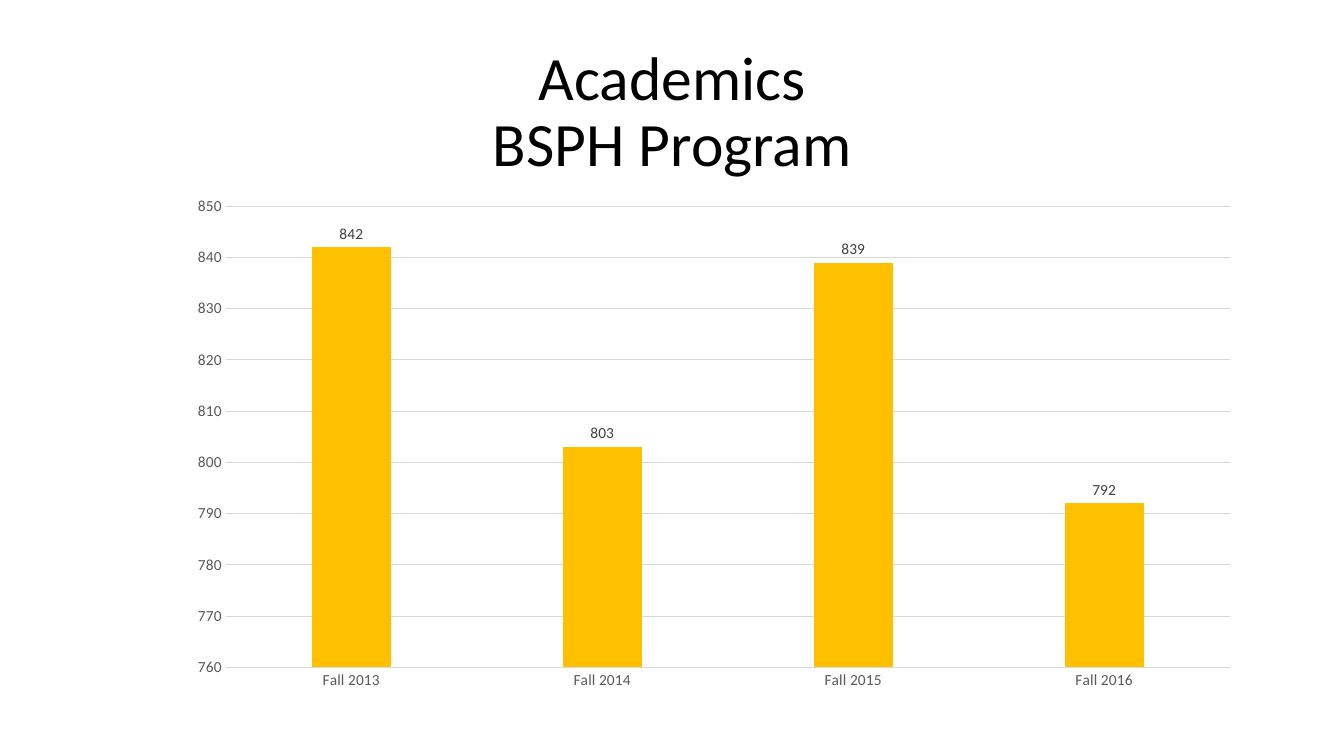
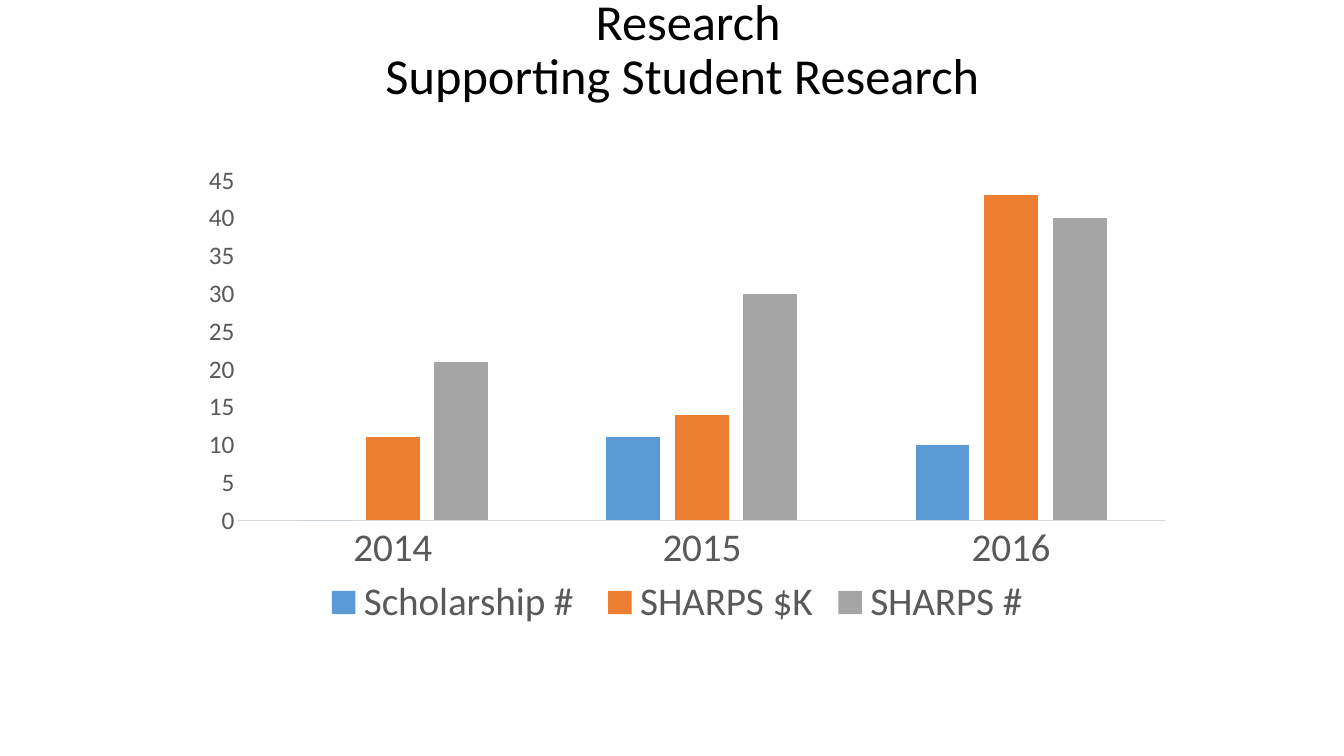
from lxml.etree import SubElement
from pptx import Presentation
from pptx.chart.data import CategoryChartData
from pptx.dml.color import RGBColor
from pptx.enum.chart import (XL_CHART_TYPE, XL_LABEL_POSITION,
                             XL_LEGEND_POSITION, XL_TICK_MARK)
from pptx.enum.text import MSO_ANCHOR, PP_ALIGN
from pptx.oxml.ns import qn
from pptx.util import Pt

PX = 9144  # EMU per px, 100 px to the inch
FONT = "Calibri"
COLORS = {
    "title": "000000",
    "axis": "595959",
    "label": "404040",
    "grid": "D9D9D9",
    "gold": "FFC000",
    "blue": "5B9BD5",
    "orange": "ED7D31",
    "gray": "A5A5A5",
}


def rgb(name):
    return RGBColor.from_string(COLORS[name])


def px(*lengths):
    return [length * PX for length in lengths]


def style_font(font, size, color):
    font.name = FONT
    font.size = Pt(size)
    font.color.rgb = rgb(color)


def style_line(line):
    line.color.rgb = rgb("grid")
    line.width = Pt(0.75)


def add_title(slide, text, box, size, bottom_inset=5):
    frame = slide.shapes.add_textbox(*px(*box)).text_frame
    frame.word_wrap = True
    frame.vertical_anchor = MSO_ANCHOR.MIDDLE
    frame.margin_bottom = bottom_inset * PX
    heading = frame.paragraphs[0]
    heading.text = text
    heading.alignment = PP_ALIGN.CENTER
    heading.line_spacing = 0.9
    style_font(heading.font, size, "title")


def add_column_chart(slide, box, categories, series, value_range, sizes):
    """Add columns; series holds (name, values, color), sizes the axis fonts."""
    data = CategoryChartData()
    data.categories = categories
    for name, values, _ in series:
        data.add_series(name, values)
    chart = slide.shapes.add_chart(
        XL_CHART_TYPE.COLUMN_CLUSTERED, *px(*box), data).chart
    chart.has_title = False
    chart.has_legend = False
    style_font(chart.font, 10, "title")

    plot = chart.plots[0]
    plot.gap_width = 219
    plot.overlap = -27
    plot.vary_by_categories = False
    for columns, (_, _, color) in zip(plot.series, series):
        columns.format.fill.solid()
        columns.format.fill.fore_color.rgb = rgb(color)

    for axis, size in zip((chart.category_axis, chart.value_axis), sizes):
        axis.major_tick_mark = XL_TICK_MARK.NONE
        axis.minor_tick_mark = XL_TICK_MARK.NONE
        axis.has_major_gridlines = False
        style_font(axis.tick_labels.font, size, "axis")
    style_line(chart.category_axis.format.line)
    chart.value_axis.format.line.fill.background()
    (chart.value_axis.minimum_scale, chart.value_axis.maximum_scale,
     chart.value_axis.major_unit) = value_range
    return chart


def add_gridlines(chart):
    chart.value_axis.has_major_gridlines = True
    style_line(chart.value_axis.major_gridlines.format.line)


def add_value_labels(chart, size):
    plot = chart.plots[0]
    plot.has_data_labels = True
    plot.data_labels.show_value = True
    plot.data_labels.position = XL_LABEL_POSITION.OUTSIDE_END
    style_font(plot.data_labels.font, size, "label")


def add_bottom_legend(chart, size):
    chart.has_legend = True
    chart.legend.position = XL_LEGEND_POSITION.BOTTOM
    chart.legend.include_in_layout = False
    style_font(chart.legend.font, size, "axis")


def place_plot(chart, x, y, w, h):
    """Fix the inner plot area, in fractions of the chart."""
    area = chart.plots[0]._element.getparent()
    for unset in area.findall(qn("c:layout")):
        area.remove(unset)
    layout = SubElement(area, qn("c:layout"))
    area.insert(0, layout)
    manual = SubElement(layout, qn("c:manualLayout"))
    settings = {"layoutTarget": "inner", "xMode": "edge", "yMode": "edge",
                "x": x, "y": y, "w": w, "h": h}
    for tag, value in settings.items():
        SubElement(manual, qn(f"c:{tag}")).set("val", str(value))


def build_academics(slide):
    add_title(slide, "Academics\vBSPH Program", (92, 40, 1150, 145), 44)
    enrollment = add_column_chart(
        slide, (175, 185, 1066, 510),
        [f"Fall {year}" for year in range(2013, 2017)],
        [("Series 1", (842, 803, 839, 792), "gold")],
        (760, 850, 10), (11, 11))
    add_gridlines(enrollment)
    add_value_labels(enrollment, 11)


def build_research(slide):
    add_title(slide, "Research\vSupporting Student Research ",
              (213, 26, 939, 105), 36, bottom_inset=60)
    support = add_column_chart(
        slide, (177, 160, 989, 469), ["2014", "2015", "2016"],
        [("Scholarship # ", (0, 11, 10), "blue"),
         ("SHARPS $K", (11, 14, 43), "orange"),
         ("SHARPS #", (21, 30, 40), "gray")],
        (0, 45, 5), (28, 18))
    add_bottom_legend(support, 28)
    place_plot(support, 0.06, 0.04, 0.93, 0.72)


def main():
    deck = Presentation()
    deck.slide_width, deck.slide_height = px(1333, 750)
    blank = deck.slide_layouts[6]
    for build in (build_academics, build_research):
        build(deck.slides.add_slide(blank))
    deck.save("out.pptx")


if __name__ == "__main__":
    main()
